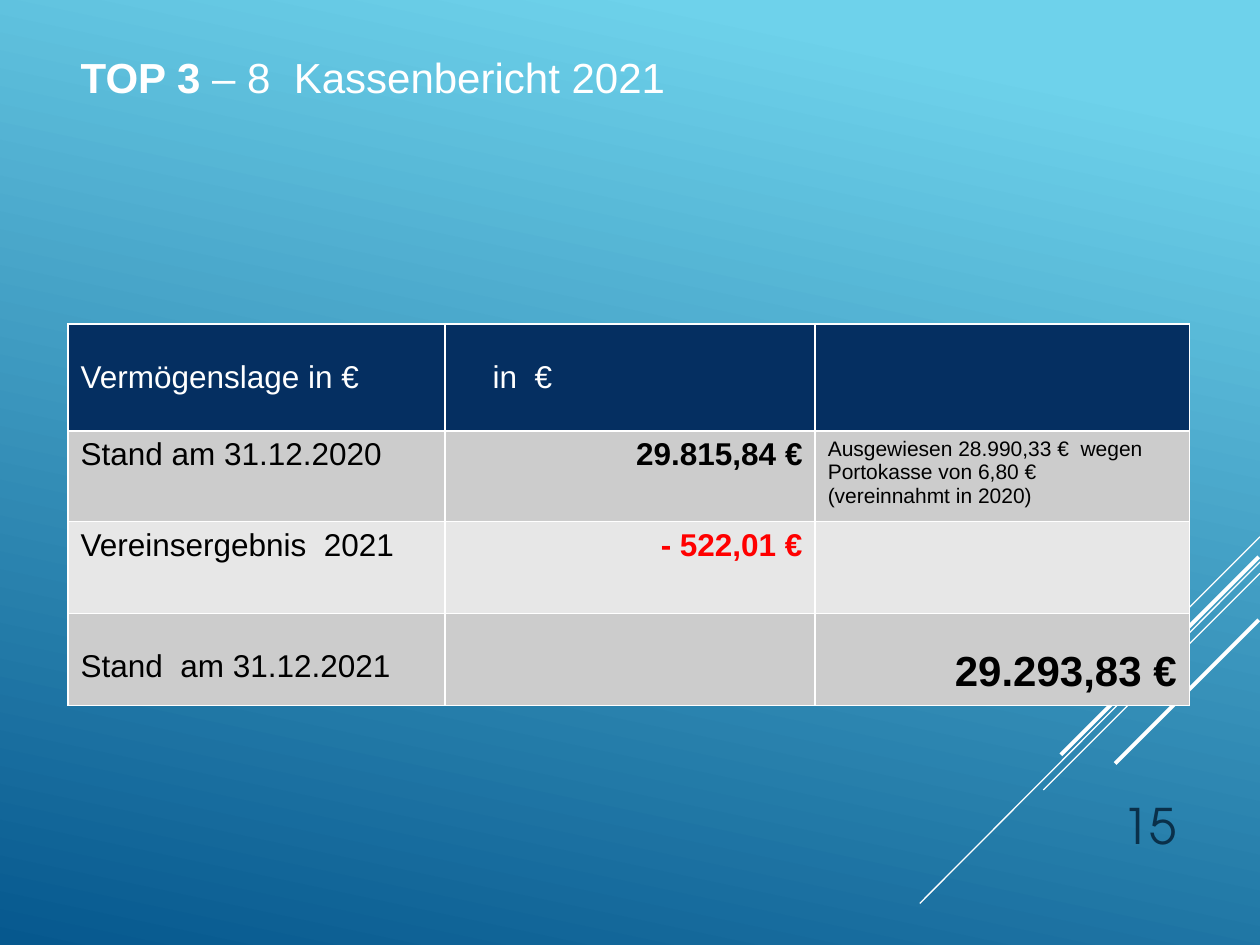
from lxml.etree import SubElement
from pptx import Presentation
from pptx.dml.color import RGBColor
from pptx.enum.shapes import MSO_CONNECTOR
from pptx.enum.text import MSO_ANCHOR, MSO_AUTO_SIZE, PP_ALIGN
from pptx.oxml.ns import qn
from pptx.util import Inches, Pt

WHITE, BLACK, RED = "FFFFFF", "000000", "FF0000"
NAVY, DARK_GREY, LIGHT_GREY = "052F61", "CCCCCC", "E7E7E7"
LEFT, RIGHT = PP_ALIGN.LEFT, PP_ALIGN.RIGHT

STRIPES = [
    ((10, 4.26), (9.17, 5.09), 0.75),
    ((10, 4.46), (7.3, 7.17), 0.75),
    ((10, 4.55), (8.28, 6.27), 0.75),
    ((9.99, 4.42), (8.42, 5.99), 2.25),
    ((9.99, 4.92), (8.85, 6.06), 2.25),
]
COLUMN_WIDTHS = [2.99, 2.94, 2.97]
ROW_HEIGHTS = [0.85, 0.72, 0.73, 0.73]
ROW_FILLS = [NAVY, DARK_GREY, LIGHT_GREY, DARK_GREY]
HEADER = dict(color=WHITE)
AMOUNT = dict(bold=True, align=RIGHT)
BALANCES = [
    [("Vermögenslage in €", HEADER), ("in  €", HEADER), ("", HEADER)],
    [("Stand am 31.12.2020", {}), ("29.815,84 €", AMOUNT),
     ("Ausgewiesen 28.990,33 €  wegen Portokasse von 6,80 €\n"
      "(vereinnahmt in 2020)", dict(size=12))],
    [("Vereinsergebnis  2021", {}),
     ("- 522,01 €", dict(AMOUNT, color=RED)), ("", {})],
    [("Stand  am 31.12.2021", {}), ("", {}),
     ("29.293,83 €", dict(AMOUNT, size=24))],
]


def rgb(value):
    """Turn a hex string into a colour."""
    return RGBColor.from_string(value)


def add_text(paragraph, text, size=18, color=BLACK, bold=False,
             font="Arial", align=LEFT):
    """Append a formatted run to a paragraph."""
    paragraph.alignment = align
    run = paragraph.add_run()
    run.text = text
    run.font.name = font
    run.font.size = Pt(size)
    run.font.bold = bold
    run.font.color.rgb = rgb(color)


def paint_background(slide):
    """Fill the slide with the blue gradient."""
    fill = slide.background.fill
    fill.gradient()
    fill.gradient_angle = 258
    stops = [(0.1, "6ED2EB"), (1, "06588E")]
    for stop, (position, color) in zip(fill.gradient_stops, stops):
        stop.position = position
        stop.color.rgb = rgb(color)


def add_stripe(slide, start, end, width):
    """Draw one white diagonal line."""
    stripe = slide.shapes.add_connector(
        MSO_CONNECTOR.STRAIGHT, *map(Inches, start + end))
    stripe.line.color.rgb = rgb(WHITE)
    stripe.line.width = Pt(width)
    SubElement(stripe._element.spPr, qn("a:effectLst"))


def add_page_number(slide, number):
    """Place the page number at the lower right."""
    box = slide.shapes.add_textbox(
        Inches(8.5), Inches(6.1), Inches(0.94), Inches(0.73))
    frame = box.text_frame
    frame.word_wrap = True
    frame.vertical_anchor = MSO_ANCHOR.BOTTOM
    add_text(frame.paragraphs[0], number, size=28, color="0A304A",
             font="TeX Gyre Adventor", align=RIGHT)


def set_borders(cell, color, width):
    """Draw all four borders of a cell."""
    properties = cell._tc.get_or_add_tcPr()
    for side in ("a:lnL", "a:lnR", "a:lnT", "a:lnB"):
        line = SubElement(properties, qn(side), w=str(Pt(width)))
        fill = SubElement(line, qn("a:solidFill"))
        SubElement(fill, qn("a:srgbClr"), val=color)


def fill_cell(cell, text, fill, text_format):
    """Give a cell its borders, fill and text."""
    set_borders(cell, WHITE, 1)
    cell.fill.solid()
    cell.fill.fore_color.rgb = rgb(fill)
    frame = cell.text_frame
    for index, line in enumerate(text.split("\n") if text else []):
        paragraph = frame.add_paragraph() if index else frame.paragraphs[0]
        add_text(paragraph, line, **text_format)


def add_balance_table(slide):
    """Add the table of assets."""
    table = slide.shapes.add_table(
        len(ROW_HEIGHTS), len(COLUMN_WIDTHS), Inches(0.54), Inches(2.57),
        Inches(sum(COLUMN_WIDTHS)), Inches(sum(ROW_HEIGHTS))).table
    for column, width in zip(table.columns, COLUMN_WIDTHS):
        column.width = Inches(width)
    for row, height, fill, entries in zip(
            table.rows, ROW_HEIGHTS, ROW_FILLS, BALANCES):
        row.height = Inches(height)
        for cell, (text, text_format) in zip(row.cells, entries):
            fill_cell(cell, text, fill, text_format)
    for cell in table.rows[0].cells:
        cell.vertical_anchor = MSO_ANCHOR.MIDDLE
    for cell in table.rows[3].cells:
        cell.margin_top = Inches(0.28)
    table.cell(0, 1).margin_left = Inches(0.38)


def set_title(slide):
    """Place and format the title."""
    title = slide.shapes.title
    title.left, title.top = Inches(0.54), Inches(0.36)
    title.width, title.height = Inches(4.89), Inches(0.5)
    frame = title.text_frame
    frame.word_wrap = False
    frame.auto_size = MSO_AUTO_SIZE.NONE
    frame.vertical_anchor = MSO_ANCHOR.TOP
    heading = frame.paragraphs[0]
    add_text(heading, "TOP 3", size=24, color=WHITE, bold=True)
    add_text(heading, " – 8  Kassenbericht 2021", size=24, color=WHITE)


def main():
    """Build and save the slide."""
    deck = Presentation()
    deck.slide_width, deck.slide_height = Inches(10), Inches(7.5)
    slide = deck.slides.add_slide(deck.slide_layouts[5])
    paint_background(slide)
    for start, end, width in STRIPES:
        add_stripe(slide, start, end, width)
    add_page_number(slide, "15")
    add_balance_table(slide)
    set_title(slide)
    deck.save("out.pptx")


if __name__ == "__main__":
    main()
